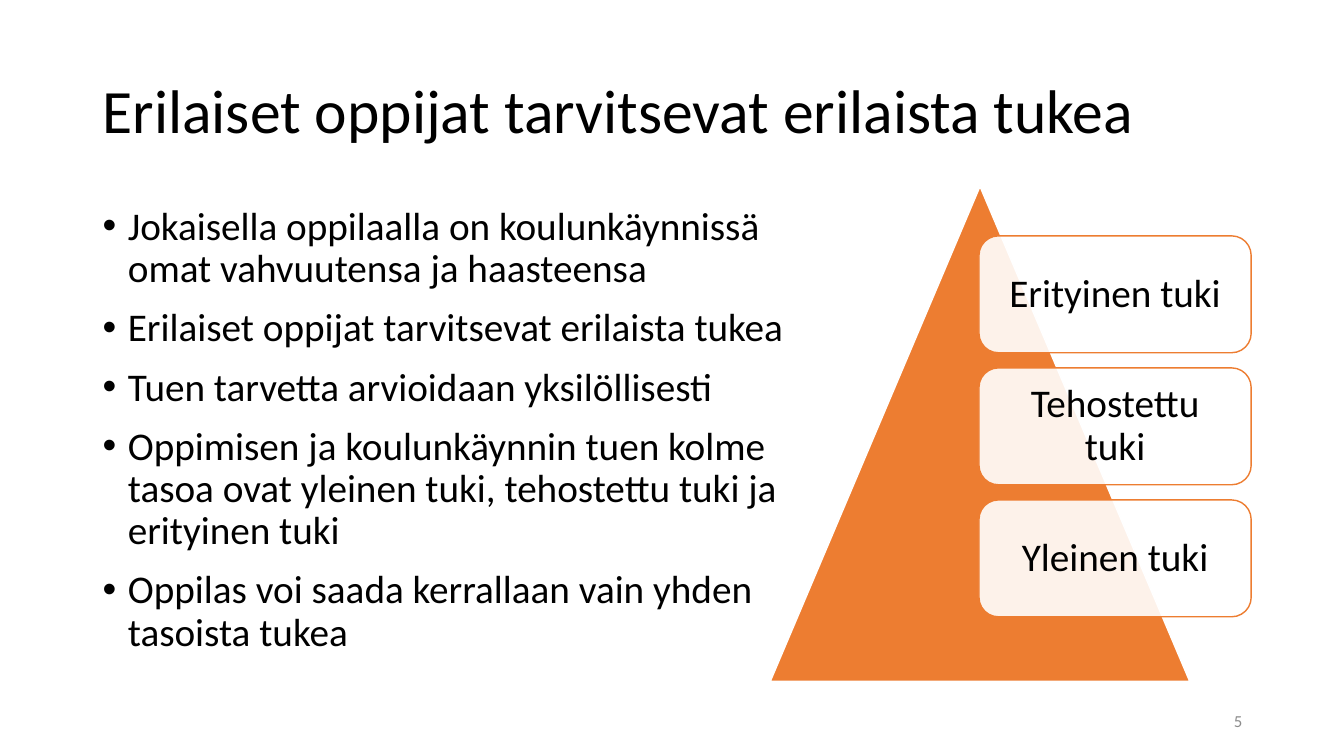
from dataclasses import dataclass
from pptx import Presentation
from pptx.dml.color import RGBColor as RGB
from pptx.enum.shapes import MSO_SHAPE as Shape
from pptx.enum.text import MSO_ANCHOR as Anchor, PP_ALIGN as Align
from pptx.oxml.ns import qn
from pptx.util import Inches, Pt
from lxml import etree

# Content
TITLE = "Erilaiset oppijat tarvitsevat erilaista tukea"
POINTS = [
    "Jokaisella oppilaalla on koulunkäynnissä omat vahvuutensa ja haasteensa",
    "Erilaiset oppijat tarvitsevat erilaista tukea",
    "Tuen tarvetta arvioidaan yksilöllisesti",
    "Oppimisen ja koulunkäynnin tuen kolme tasoa ovat yleinen tuki, "
    "tehostettu tuki ja erityinen tuki",
    "Oppilas voi saada kerrallaan vain yhden tasoista tukea",
]
LEVELS = ["Erityinen tuki", "Tehostettu tuki", "Yleinen tuki"]
NUMBER = "5"


@dataclass
class Theme:
    font: str = "Calibri"
    ink: str = "000000"
    muted: str = "8C8C8C"
    accent: str = "ED7D31"
    paper: str = "FFFFFF"
    head: int = 44
    body: int = 28
    small: int = 12


theme = Theme()

# Layout in inches
HEAD = (0.92, 0.4, 11.5, 1.45)
BODY = (0.92, 2, 7.21, 4.76)
PEAK = (7.64, 1.85, 4.16, 4.91)
FOOT = (9.42, 6.95, 3, 0.4)
CARD = (9.71, 2.34, 2.7, 1.16)
STEP = 1.31
PAD = 0.12

deck = Presentation()
deck.slide_width, deck.slide_height = Inches(13.33), Inches(7.5)
slide = deck.slides.add_slide(deck.slide_layouts[6])


def write(frame, lines, size, color=theme.ink, align=Align.LEFT,
          anchor=Anchor.MIDDLE, space=0.9):
    frame.word_wrap = True
    frame.vertical_anchor = anchor
    for i, line in enumerate(lines):
        para = frame.paragraphs[0] if i == 0 else frame.add_paragraph()
        para.alignment = align
        para.line_spacing = space
        run = para.add_run()
        run.text = line
        run.font.name = theme.font
        run.font.size = Pt(size)
        run.font.color.rgb = RGB.from_string(color)


def add_text(box, lines, size, **style):
    frame = slide.shapes.add_textbox(*map(Inches, box)).text_frame
    write(frame, lines, size, **style)
    return frame


def add_shape(kind, box, fill, line):
    shape = slide.shapes.add_shape(kind, *map(Inches, box))
    shape.shadow.inherit = False
    shape.fill.solid()
    shape.fill.fore_color.rgb = RGB.from_string(fill)
    shape.line.color.rgb = RGB.from_string(line)
    shape.line.width = Pt(1)
    return shape


def bullet(para):
    para.space_before = Pt(12)
    props = para._p.get_or_add_pPr()
    props.set("marL", str(Inches(0.25)))
    props.set("indent", str(Inches(-0.25)))
    etree.SubElement(props, qn("a:buFont")).set("typeface", "Arial")
    etree.SubElement(props, qn("a:buChar")).set("char", "•")


# Title and bullet list
add_text(HEAD, [TITLE], theme.head)
body = add_text(BODY, POINTS, theme.body, anchor=Anchor.TOP)
for para in body.paragraphs:
    bullet(para)

# Pyramid with the levels of support
add_shape(Shape.ISOSCELES_TRIANGLE, PEAK, theme.accent, theme.paper)
left, top, width, height = CARD
for i, level in enumerate(LEVELS):
    box = (left, top + i * STEP, width, height)
    card = add_shape(Shape.ROUNDED_RECTANGLE, box, theme.paper, theme.accent)
    tint = card.fill._xPr.find(".//" + qn("a:solidFill"))[0]
    etree.SubElement(tint, qn("a:alpha")).set("val", "90000")
    frame = card.text_frame
    frame.margin_left = frame.margin_right = Inches(PAD)
    frame.margin_top = frame.margin_bottom = Inches(PAD)
    write(frame, [level], theme.body, align=Align.CENTER)

# Slide number
add_text(FOOT, [NUMBER], theme.small, color=theme.muted, align=Align.RIGHT,
         space=1.0)

deck.save("out.pptx")
